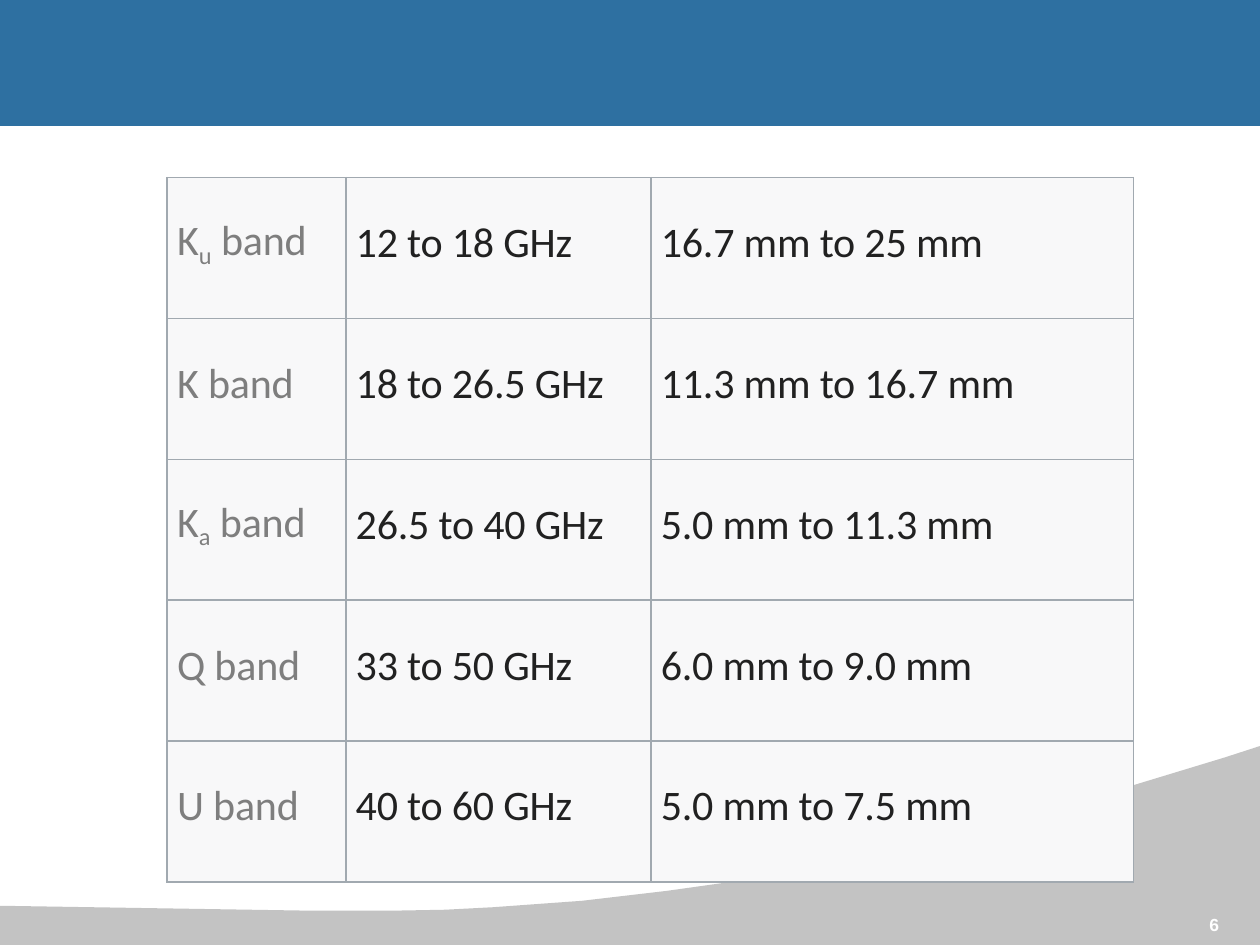
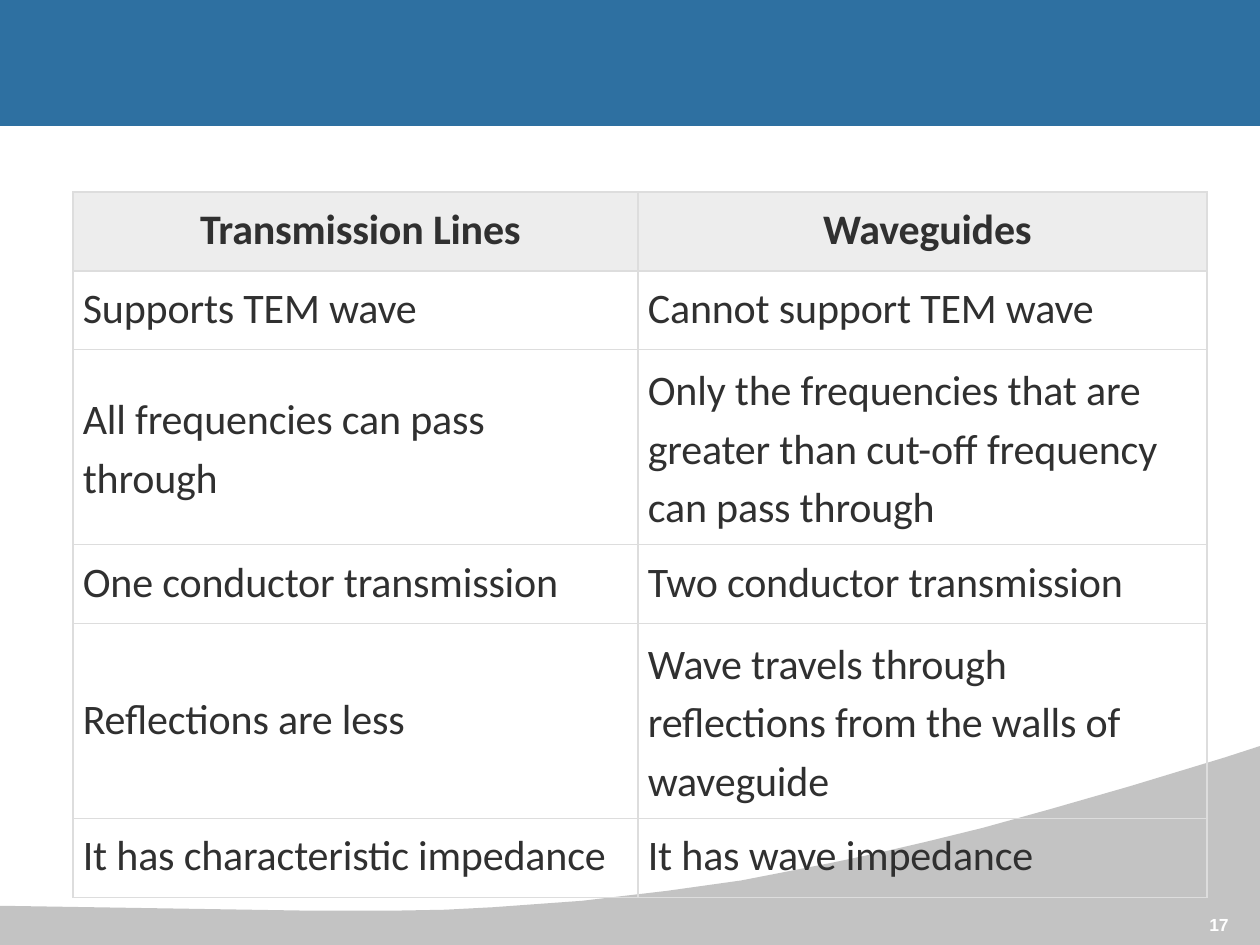
from lxml import etree
from pptx import Presentation
from pptx import util as u
from pptx.dml.color import RGBColor
from pptx.enum import shapes, text
from pptx.oxml.ns import qn

BLUE = RGBColor(0x2E, 0x70, 0xA1)
WAVE_GREY = RGBColor(0x7B, 0x7B, 0x7B)
WHITE = RGBColor(0xFF, 0xFF, 0xFF)
BAND_NAME = RGBColor(0x7E, 0x7E, 0x7E)
BAND_VALUE = RGBColor(0x21, 0x21, 0x21)
BAND_FILL = RGBColor(0xF8, 0xF8, 0xF9)
BAND_BORDER = RGBColor(0xA1, 0xA9, 0xB0)
COMPARE_TEXT = RGBColor(0x30, 0x30, 0x30)
COMPARE_FILL = RGBColor(0xED, 0xED, 0xED)
COMPARE_BORDER = RGBColor(0xDD, 0xDD, 0xDD)

PAGE_WIDTH, PAGE_HEIGHT = 25.4, 19.05
WAVE = [
    (25.4, 15.04), (24.69, 15.27), (22.78, 15.85), (21.18, 16.31),
    (19.81, 16.69), (18.67, 16.97), (17.68, 17.2), (16.74, 17.4),
    (15.82, 17.58), (14.94, 17.75), (13.44, 17.96), (11.73, 18.16),
    (9.93, 18.29), (8.97, 18.34), (7.85, 18.36), (6.32, 18.36),
    (0, 18.26), (0, PAGE_HEIGHT), (PAGE_WIDTH, PAGE_HEIGHT),
]

BANDS = [
    (("K", "u", " band"), "12 to 18 GHz", "16.7 mm to 25 mm"),
    ("K band", "18 to 26.5 GHz", "11.3 mm to 16.7 mm"),
    (("K", "a", " band"), "26.5 to 40 GHz", "5.0 mm to 11.3 mm"),
    ("Q band", "33 to 50 GHz", "6.0 mm to 9.0 mm"),
    ("U band", "40 to 60 GHz", "5.0 mm to 7.5 mm"),
]
COMPARISON = [
    ("Transmission Lines", "Waveguides"),
    ("Supports TEM wave", "Cannot support TEM wave"),
    ("All frequencies can pass\nthrough",
     "Only the frequencies that are\ngreater than cut-off frequency\ncan pass through"),
    ("One conductor transmission", "Two conductor transmission"),
    ("Reflections are less",
     "Wave travels through\nreflections from the walls of\nwaveguide"),
    ("It has characteristic impedance", "It has wave impedance"),
]


def set_values(target, values):
    for name, value in values.items():
        setattr(target, name, value)


def add_span(para, words, subscript=False, **font):
    span = para.add_run()
    span.text = words
    set_values(span.font, {"name": "Calibri", "size": u.Pt(24), **font})
    properties = span.font._element
    properties.set("spc", "-10")
    if subscript:
        properties.set("baseline", "-21000")


def add_border(cell, colour):
    properties = cell._tc.get_or_add_tcPr()
    for index, side in enumerate(("lnL", "lnR", "lnT", "lnB")):
        line = etree.Element(qn(f"a:{side}"), w=str(u.Pt(1)))
        fill = etree.SubElement(line, qn("a:solidFill"))
        etree.SubElement(fill, qn("a:srgbClr"), val=str(colour))
        properties.insert(index, line)


def fill_cell(cell, content, fill, border, bottom, align, font):
    set_values(cell, {
        "margin_left": u.Cm(0.2), "margin_right": 0, "margin_top": 0,
        "margin_bottom": u.Cm(bottom), "vertical_anchor": text.MSO_ANCHOR.MIDDLE,
    })
    if fill is None:
        cell.fill.background()
    else:
        cell.fill.solid()
        cell.fill.fore_color.rgb = fill
    add_border(cell, border)
    para = cell.text_frame.paragraphs[0]
    para.alignment = align
    colour = font.pop("colour")
    if isinstance(content, tuple):
        for index, words in enumerate(content):
            add_span(para, words, subscript=index == 1, **font)
    else:
        lines = content.split("\n")
        if len(lines) > 1:
            para.line_spacing = 1.15
        for index, words in enumerate(lines):
            if index:
                para.add_line_break()
            add_span(para, words, **font)
    for span in para.runs:
        span.font.color.rgb = colour


def add_grid(page, rows, left, top, widths, heights):
    frame = page.shapes.add_table(
        len(rows), len(widths), u.Cm(left), u.Cm(top),
        u.Cm(sum(widths)), u.Cm(sum(heights)))
    table = frame.table
    set_values(table, {"first_row": False, "horz_banding": False})
    for column, width in zip(table.columns, widths):
        column.width = u.Cm(width)
    for row, height in zip(table.rows, heights):
        row.height = u.Cm(height)
    return table


def add_page(deck, number):
    page = deck.slides.add_slide(deck.slide_layouts[6])
    points = [(u.Cm(x), u.Cm(y)) for x, y in WAVE]
    builder = page.shapes.build_freeform(*points[0])
    builder.add_line_segments(points[1:], close=True)
    wave = builder.convert_to_shape()
    header = page.shapes.add_shape(
        shapes.MSO_SHAPE.RECTANGLE, 0, 0, u.Cm(PAGE_WIDTH), u.Cm(2.54))
    for shape, colour in ((wave, WAVE_GREY), (header, BLUE)):
        shape.shadow.inherit = False
        shape.fill.solid()
        shape.fill.fore_color.rgb = colour
        shape.line.fill.background()
    tint = wave._element.spPr.find(qn("a:solidFill"))[0]
    etree.SubElement(tint, qn("a:alpha"), val="45000")

    box = page.shapes.add_textbox(u.Cm(24.28), u.Cm(18.42), u.Cm(0.61), u.Cm(0.45))
    set_values(box.text_frame, {
        "margin_left": u.Cm(0.1), "margin_right": 0, "margin_top": 0,
        "margin_bottom": 0, "word_wrap": True,
    })
    para = box.text_frame.paragraphs[0]
    add_span(para, str(number), name="Arial", size=u.Pt(10), bold=True)
    para.runs[0].font.color.rgb = WHITE
    return page


def add_bands(page):
    table = add_grid(page, BANDS, 3.37, 3.58, [3.6, 6.15, 9.73], [2.84] * len(BANDS))
    for r, row in enumerate(BANDS):
        for c, content in enumerate(row):
            colour = BAND_VALUE if c else BAND_NAME
            fill_cell(table.cell(r, c), content, BAND_FILL, BAND_BORDER, 0.2,
                      text.PP_ALIGN.LEFT, {"colour": colour})


def add_comparison(page):
    heights = [3.93 if "\n" in row[1] else 1.59 for row in COMPARISON]
    table = add_grid(page, COMPARISON, 1.47, 3.87, [11.39, 11.47], heights)
    for r, row in enumerate(COMPARISON):
        is_head = r == 0
        for c, content in enumerate(row):
            fill_cell(table.cell(r, c), content, COMPARE_FILL if is_head else None,
                      COMPARE_BORDER, 0.05,
                      text.PP_ALIGN.CENTER if is_head else text.PP_ALIGN.LEFT,
                      {"colour": COMPARE_TEXT, "bold": is_head})


def main():
    deck = Presentation()
    set_values(deck, {"slide_width": u.Cm(PAGE_WIDTH), "slide_height": u.Cm(PAGE_HEIGHT)})
    add_bands(add_page(deck, 6))
    add_comparison(add_page(deck, 17))
    deck.save("out.pptx")


if __name__ == "__main__":
    main()
